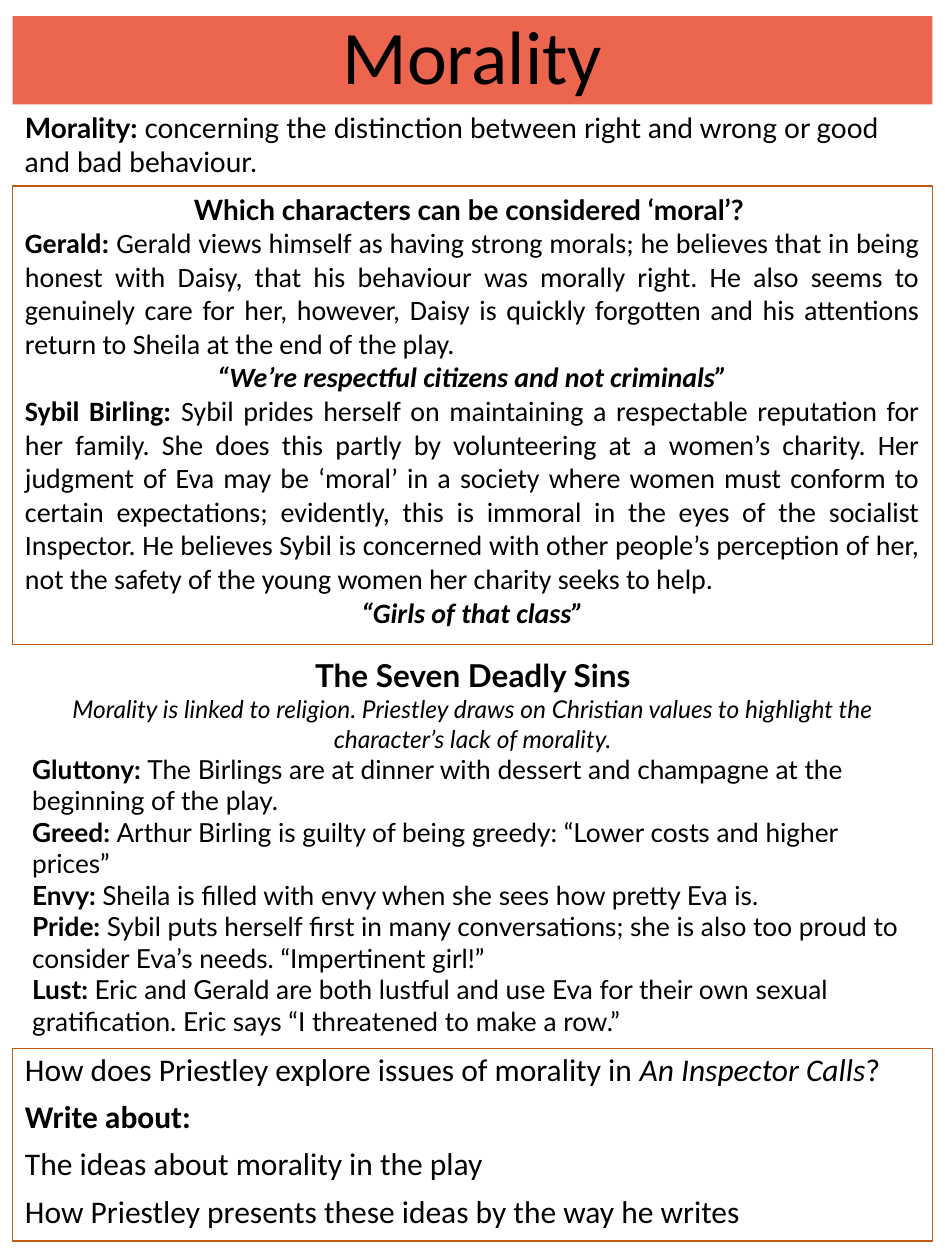
from pptx import Presentation
from pptx.dml.color import RGBColor
from pptx.enum.shapes import MSO_SHAPE
from pptx.enum.text import MSO_ANCHOR, PP_ALIGN
from pptx.util import Pt

LEFT, CENTER, JUSTIFY = PP_ALIGN.LEFT, PP_ALIGN.CENTER, PP_ALIGN.JUSTIFY
TOP, MIDDLE = MSO_ANCHOR.TOP, MSO_ANCHOR.MIDDLE
RECTANGLE = MSO_SHAPE.RECTANGLE

THEME = {
    "text": RGBColor(0x00, 0x00, 0x00),
    "banner": RGBColor(0xEB, 0x65, 0x4F),
    "border": RGBColor(0xC5, 0x5A, 0x11),
    "main": "Calibri", "accent": "Lato",
    "title": 43.2, "heading": 18, "body": 16, "sin": 15, "note": 14,
}

# Content: a span is (text, style), where style holds b for bold, i for italic
DEFINITION = ("Morality: ", "concerning the distinction between right and wrong or good and bad behaviour.")
CHARACTER_HEADING = "Which characters can be considered ‘moral’? "
CHARACTERS = [
    ("Gerald: ",
     "Gerald views himself as having strong morals; he believes that in being honest with Daisy, "
     "that his behaviour was morally right. He also seems to genuinely care for her, however, "
     "Daisy is quickly forgotten and his attentions return to Sheila at the end of the play.",
     "“We’re respectful citizens and not criminals”"),
    ("Sybil Birling: ",
     "Sybil prides herself on maintaining a respectable reputation for her family. She does this "
     "partly by volunteering at a women’s charity. Her judgment of Eva may be ‘moral’ in a society "
     "where women must conform to certain expectations; evidently, this is immoral in the eyes of "
     "the socialist Inspector. He believes Sybil is concerned with other people’s perception of "
     "her, not the safety of the young women her charity seeks to help.",
     "“Girls of that class”"),
]
SINS_HEADING = "The Seven Deadly Sins"
SINS_NOTE = ("Morality is linked to religion. Priestley draws on Christian values to highlight "
             "the character’s lack of morality.")
SINS = [
    ("Gluttony: ", "The Birlings are at dinner with dessert and champagne at the beginning of the play."),
    ("Greed: ", "Arthur Birling is guilty of being greedy: “Lower costs and higher prices”"),
    ("Envy: ", "Sheila is filled with envy when she sees how pretty Eva is."),
    ("Pride: ", "Sybil puts herself first in many conversations; she is also too proud to consider "
                "Eva’s needs. “Impertinent girl!”"),
    ("Lust: ", "Eric and Gerald are both lustful and use Eva for their own sexual gratification. "
               "Eric says “I threatened to make a row.”"),
]
TASK = [
    [("How does Priestley explore issues of morality in ", ""), ("An Inspector Calls", "i"), ("?", "")],
    [("Write about:", "b")],
    [("The ideas about morality in the play", "")],
    [("How Priestley presents these ideas by the way he writes", "")],
]

# Layout in points: left, top, width, height
PAGE_SIZE = (540, 720)
MARGIN = 7.2
FULL = PAGE_SIZE[0] - 2 * MARGIN
TITLE_AREA = (MARGIN, 9.2, FULL, 50.5)
DEFINITION_AREA = (MARGIN, 59.7, FULL, 46)
CHARACTER_AREA = (MARGIN, 106.2, FULL, 262)
SINS_AREA = (11.3, 371.5, 517.7, 227)
TASK_AREA = (MARGIN, 599, FULL, 110.2)


def labelled(label, text):
    return [(label, "b"), (text, "")]


def add_paragraph(frame, first, spans, size, font, align=LEFT, spacing=None, before=None):
    para = frame.paragraphs[0] if first else frame.add_paragraph()
    para.alignment = align
    para.line_spacing = spacing
    if before is not None:
        para.space_before = Pt(before)
    for text, style in spans:
        span = para.add_run()
        span.text = text
        span.font.size = Pt(size)
        span.font.name = THEME[font]
        span.font.color.rgb = THEME["text"]
        span.font.bold = "b" in style
        span.font.italic = "i" in style


def add_block(page, area, paragraphs, fill=None, border=None, anchor=TOP):
    """Add a text box, or a rectangle when there is a fill or border."""
    place = [Pt(value) for value in area]
    if fill is None and border is None:
        box = page.shapes.add_textbox(*place)
    else:
        box = page.shapes.add_shape(RECTANGLE, *place)
        box.shadow.inherit = False
        if fill is None:
            box.fill.background()
        else:
            box.fill.solid()
            box.fill.fore_color.rgb = fill
        if border is None:
            box.line.fill.background()
        else:
            box.line.color.rgb = border
            box.line.width = Pt(0.75)
    frame = box.text_frame
    frame.word_wrap = True
    frame.vertical_anchor = anchor
    for index, settings in enumerate(paragraphs):
        add_paragraph(frame, index == 0, **settings)


def main():
    deck = Presentation()
    deck.slide_width, deck.slide_height = [Pt(value) for value in PAGE_SIZE]
    page = deck.slides.add_slide(deck.slide_layouts[6])
    border = THEME["border"]

    # Title banner
    title = dict(spans=[("Morality", "")], size=THEME["title"], font="main", align=CENTER, spacing=0.9)
    add_block(page, TITLE_AREA, [title], fill=THEME["banner"], anchor=MIDDLE)

    # Essay task
    task = [dict(spans=spans, size=THEME["heading"], font="main", spacing=0.9,
                 before=7.5) for spans in TASK]
    add_block(page, TASK_AREA, task, border=border)

    # Definition
    definition = dict(spans=labelled(*DEFINITION), size=THEME["body"], font="accent")
    add_block(page, DEFINITION_AREA, [definition])

    # Moral characters, each followed by a quotation
    body = dict(size=THEME["body"], font="main")
    characters = [dict(spans=[(CHARACTER_HEADING, "b")], size=THEME["body"], font="accent", align=CENTER)]
    for name, text, quote in CHARACTERS:
        characters.append(dict(body, spans=labelled(name, text), align=JUSTIFY))
        characters.append(dict(body, spans=[(quote, "bi")], align=CENTER))
    add_block(page, CHARACTER_AREA, characters, border=border)

    # Deadly sins
    sins = [
        dict(spans=[(SINS_HEADING, "b")], size=THEME["heading"], font="accent", align=CENTER),
        dict(spans=[(SINS_NOTE, "i")], size=THEME["note"], font="accent", align=CENTER),
    ]
    sins += [dict(spans=labelled(*sin), size=THEME["sin"], font="accent") for sin in SINS]
    add_block(page, SINS_AREA, sins)

    deck.save("out.pptx")


if __name__ == "__main__":
    main()
